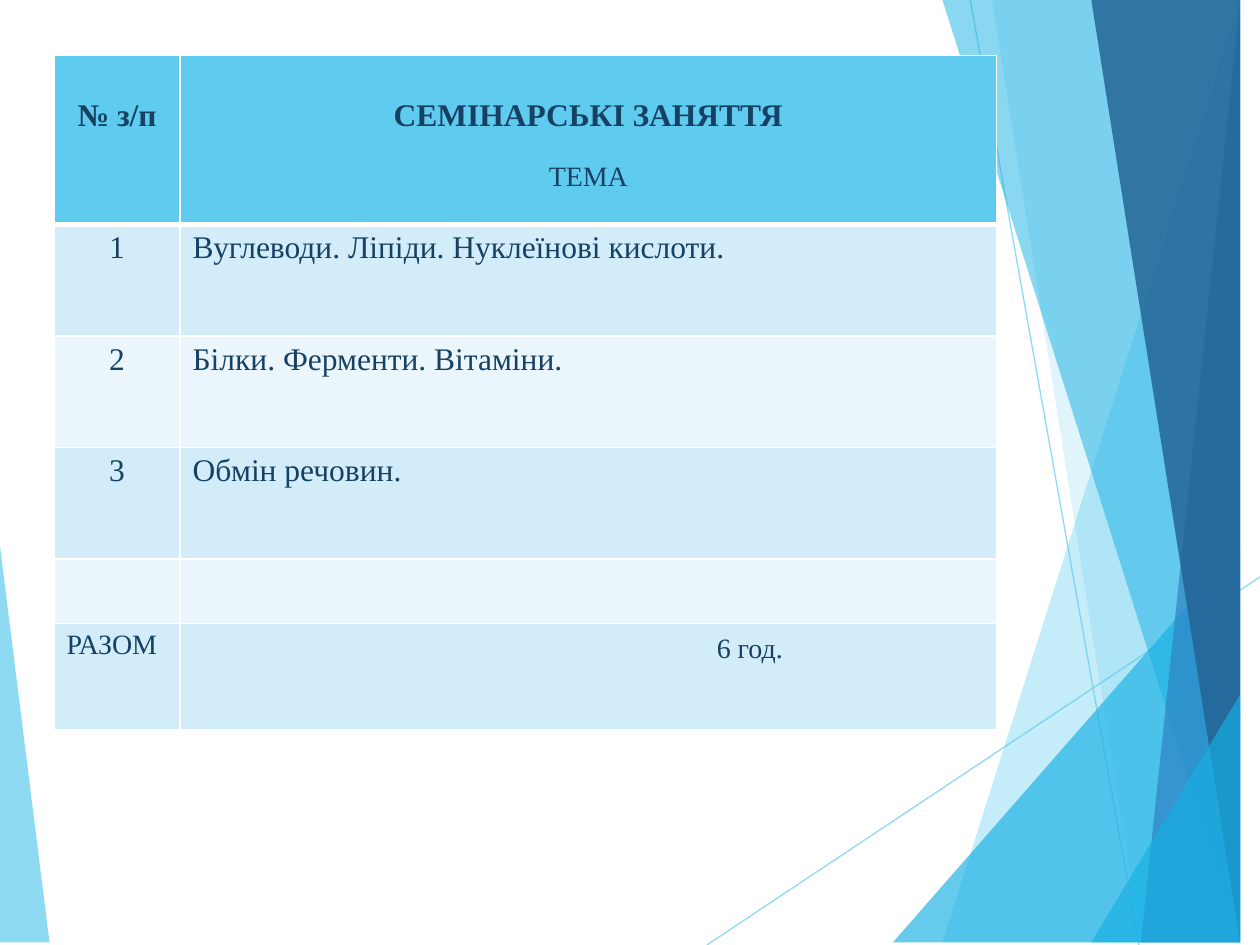
"""Build the seminar topics slide: a table over layered blue facets."""
from dataclasses import dataclass

from lxml.etree import SubElement
from pptx import Presentation
from pptx.dml.color import RGBColor
from pptx.enum.shapes import MSO_CONNECTOR as Connector
from pptx.enum.text import PP_ALIGN as Align
from pptx.oxml.ns import qn
from pptx.util import Cm, Pt


@dataclass(frozen=True)
class Theme:
    sky: str = "5FCBEF"
    azure: str = "17B0E4"
    blue: str = "2E83C3"
    navy: str = "226292"
    ink: str = "174162"
    white: str = "FFFFFF"
    bands: tuple = ("EAF6FC", "D2ECF9")
    font: str = "Times New Roman"
    large: int = 18
    small: int = 16


def paint(fill, color, opacity, element):
    fill.solid()
    fill.fore_color.rgb = RGBColor.from_string(color)
    for node in element.iter(qn("a:srgbClr")):
        SubElement(node, qn("a:alpha"), val=str(opacity * 1000))


def write(para, text, size, align, bold=False):
    para.alignment = align
    span = para.add_run()
    span.text = text
    style = {"name": theme.font, "size": Pt(size), "bold": bold}
    for name, value in style.items():
        setattr(span.font, name, value)
    span.font.color.rgb = RGBColor.from_string(theme.ink)


theme = Theme()
width, height = 25.4, 19.05
deck = Presentation()
deck.slide_width, deck.slide_height = Cm(width), Cm(height)
page = deck.slides.add_slide(deck.slide_layouts[6])

for start, end in [((14.25, height), (width, 11.63)), ((19.56, 0), (22.96, height))]:
    line = page.shapes.add_connector(Connector.STRAIGHT, *map(Cm, start + end))
    line.line.width = Pt(0.75)
    paint(line.line.fill, theme.sky, 70, line.element)
    SubElement(line.element.spPr, qn("a:effectLst"))

corner = (width, height)
facets = [
    ([(0, 11.31), (1.24, height), (0, height)], theme.sky, 70),
    ([(24.77, 0), (19.15, height), corner, (width, 0)], theme.sky, 36),
    ([(20.02, 0), (23.34, height), corner, (width, 0)], theme.sky, 20),
    ([(18.44, height), (width, 10.9), corner], theme.azure, 66),
    ([(19.48, 0), (24.64, height), corner, (width, 0)], theme.azure, 50),
    ([(24.92, 0), (23.04, height), corner, (width, 0)], theme.blue, 70),
    ([(22.48, 0), (25.1, height), corner, (width, 0)], theme.navy, 82),
    ([(22.4, height), (width, 13.68), corner], theme.azure, 66),
]
for points, color, opacity in facets:
    builder = page.shapes.build_freeform(*points[0], scale=Cm(1))
    builder.add_line_segments(points[1:], close=True)
    facet = builder.convert_to_shape()
    facet.shadow.inherit = False
    facet.line.fill.background()
    paint(facet.fill, color, opacity, facet.element.spPr)

columns = [2.54, 16.46]
heights = [3.4, 2.25, 2.25, 2.25, 1.3, 2.14]
frame = page.shapes.add_table(
    len(heights), len(columns), Cm(1.09), Cm(1.12), Cm(sum(columns)), Cm(sum(heights))
)
table = frame.table
table.first_row = table.horz_banding = False
for column, size in zip(table.columns, columns):
    column.width = Cm(size)
for row, size in zip(table.rows, heights):
    row.height = Cm(size)

for index, element in enumerate(frame.element.iter(qn("a:tc"))):
    row = index // len(columns)
    weights = {
        "L": 1,
        "R": 1,
        "T": 3 if row == 1 else 1,
        "B": 3 if row == 0 else 1,
    }
    for side, weight in weights.items():
        border = SubElement(element.get_or_add_tcPr(), qn(f"a:ln{side}"), w=str(Pt(weight)))
        SubElement(SubElement(border, qn("a:solidFill")), qn("a:srgbClr"), val=theme.white)

for row in range(len(heights)):
    for column in range(len(columns)):
        cell = table.cell(row, column)
        cell.fill.solid()
        color = theme.bands[row % 2] if row else theme.sky
        cell.fill.fore_color.rgb = RGBColor.from_string(color)

for column, title in enumerate(["№ з/п", "СЕМІНАРСЬКІ ЗАНЯТТЯ"]):
    cell = table.cell(0, column)
    cell.margin_top = Cm(0.86)
    write(cell.text_frame.paragraphs[0], title, theme.large, Align.CENTER, bold=True)
subtitle = table.cell(0, 1).text_frame.add_paragraph()
subtitle.space_before = Pt(16.5)
write(subtitle, "ТЕМА", theme.small, Align.CENTER)

topics = [
    "Вуглеводи. Ліпіди. Нуклеїнові кислоти.",
    "Білки. Ферменти. Вітаміни.",
    "Обмін речовин.",
]
for number, topic in enumerate(topics, start=1):
    write(table.cell(number, 0).text_frame.paragraphs[0], str(number), theme.large, Align.CENTER)
    write(table.cell(number, 1).text_frame.paragraphs[0], topic, theme.large, Align.LEFT)

total = table.cell(5, 1)
total.margin_left, total.margin_top = Cm(10.82), Cm(0.2)
for column, text in enumerate(["РАЗОМ", "6 год."]):
    write(table.cell(5, column).text_frame.paragraphs[0], text, theme.small, Align.LEFT)

deck.save("out.pptx")
